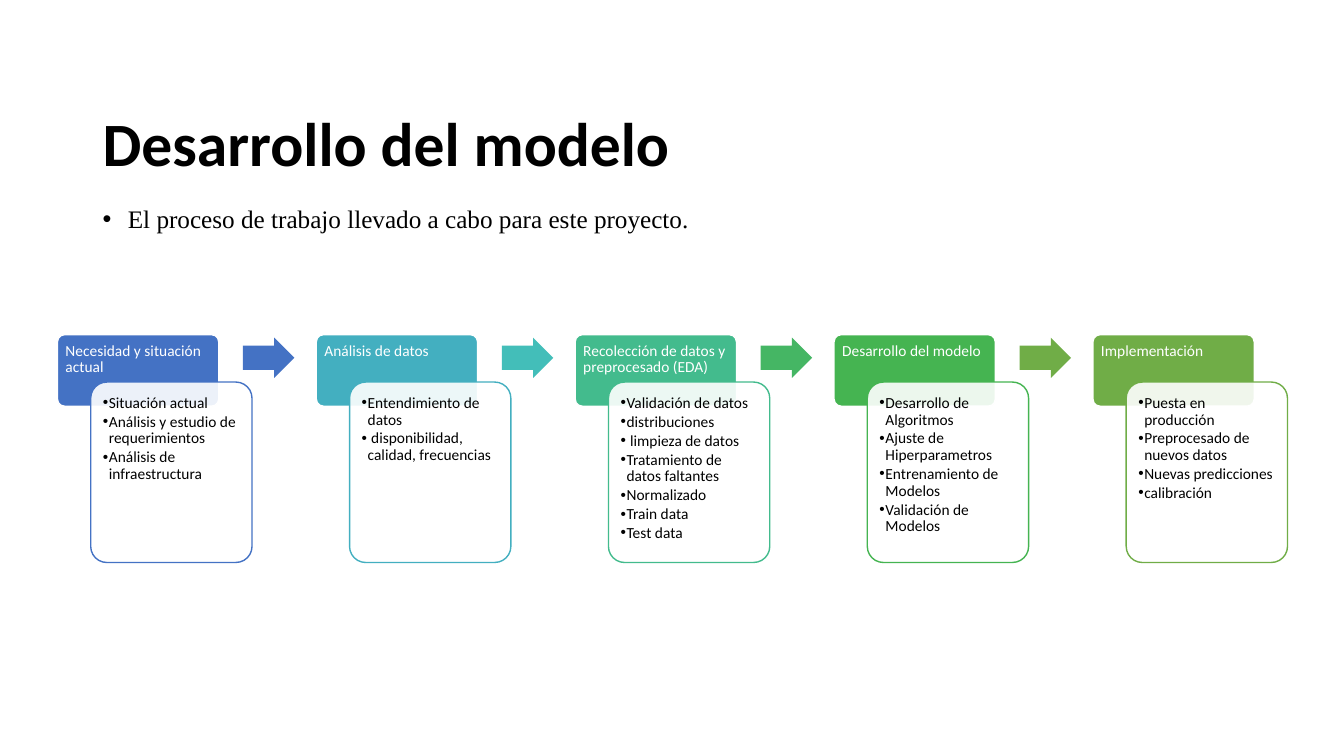
from pptx import Presentation
from pptx import util as u
from pptx.dml.color import RGBColor
from pptx.enum import shapes, text
from pptx.oxml.ns import qn
from lxml import etree

COLORS = {
    "white": "FFFFFF", "black": "000000", "blue": "4472C4",
    "cyan": "43AFC0", "turquoise": "43BEB9", "teal": "43BB8D",
    "emerald": "45B664", "green": "45B451", "olive": "70AD47",
}

# Heading, details, stage colour, colour of the arrow to the next stage
STAGES = [
    ("Necesidad y situación actual",
     ["Situación actual", "Análisis y estudio de requerimientos",
      "Análisis de infraestructura"], "blue", "blue"),
    ("Análisis de datos",
     ["Entendimiento de datos", " disponibilidad, calidad, frecuencias"],
     "cyan", "turquoise"),
    ("Recolección de datos y preprocesado (EDA)",
     ["Validación de datos", "distribuciones", " limpieza de datos",
      "Tratamiento de datos faltantes", "Normalizado", "Train data",
      "Test data"], "teal", "emerald"),
    ("Desarrollo del modelo",
     ["Desarrollo de Algoritmos", "Ajuste de Hiperparametros",
      "Entrenamiento de Modelos", "Validación de Modelos"],
     "green", "olive"),
    ("Implementación",
     ["Puesta en producción", "Preprocesado de nuevos datos",
      "Nuevas predicciones", "calibración"], "olive", None),
]
FIRST_LEFT, LAST_LEFT = 0.57, 10.84
PITCH = (LAST_LEFT - FIRST_LEFT) / (len(STAGES) - 1)


def rgb(name):
    return RGBColor.from_string(COLORS[name])


def write(frame, lines, size=11, font="Calibri", color="black", bold=False,
          hanging=0, after=0, level=0, insets=(0.1, 0.05, 0.1, 0.05),
          anchor=text.MSO_ANCHOR.TOP):
    """Fill a text frame, one paragraph a line; a hanging indent adds bullets."""
    frame.word_wrap = True
    frame.vertical_anchor = anchor
    (frame.margin_left, frame.margin_top,
     frame.margin_right, frame.margin_bottom) = map(u.Inches, insets)
    for index, line in enumerate(lines):
        para = frame.add_paragraph() if index else frame.paragraphs[0]
        if hanging:
            properties = para._p.get_or_add_pPr()
            properties.set("marL", str(u.Inches(hanging)))
            properties.set("indent", str(-u.Inches(hanging)))
            etree.SubElement(properties, qn("a:buFont"), typeface="Arial")
            etree.SubElement(properties, qn("a:buChar"), char="•")
        para.level = level
        para.alignment = text.PP_ALIGN.LEFT
        para.line_spacing = 0.9
        para.space_after = u.Pt(after)
        span = para.add_run()
        span.text = line
        span.font.size = u.Pt(size)
        span.font.name = font
        span.font.bold = bold
        span.font.color.rgb = rgb(color)


class ProcessSlide:
    def __init__(self, deck):
        self.page = deck.slides.add_slide(deck.slide_layouts[6])

    def text_box(self, area, lines, **style):
        box = self.page.shapes.add_textbox(*map(u.Inches, area))
        write(box.text_frame, lines, **style)

    def shape(self, kind, area, adjustments, fill, outline=None, opacity=100):
        item = self.page.shapes.add_shape(kind, *map(u.Inches, area))
        item.shadow.inherit = False
        for index, value in enumerate(adjustments):
            item.adjustments[index] = value
        item.fill.solid()
        item.fill.fore_color.rgb = rgb(fill)
        if opacity < 100:
            tint = item._element.spPr.find(qn("a:solidFill"))[0]
            etree.SubElement(tint, qn("a:alpha"), val=str(opacity * 1000))
        if outline:
            item.line.color.rgb = rgb(outline)
            item.line.width = u.Pt(1)
        else:
            item.line.fill.background()

    def stage(self, left, heading, details, color, arrow_color):
        rounded = shapes.MSO_SHAPE.ROUNDED_RECTANGLE
        self.shape(rounded, (left, 3.32, 1.6, 0.71), [0.1], color, "white")
        self.text_box((left, 3.32, 1.6, 0.47), [heading], color="white",
                      insets=(0.08, 0.08, 0.08, 0.05))
        self.shape(rounded, (left + 0.33, 3.79, 1.6, 1.79), [0.1],
                   "white", color, opacity=90)
        self.text_box((left + 0.37, 3.84, 1.5, 1.7), details, hanging=0.06,
                      after=1.65, level=1, insets=(0.08, 0.08, 0.08, 0.08))
        if arrow_color:
            self.shape(shapes.MSO_SHAPE.RIGHT_ARROW,
                       (left + 1.84, 3.35, 0.51, 0.4), [0.6, 0.5], arrow_color)


def main():
    deck = Presentation()
    deck.slide_width, deck.slide_height = u.Inches(13.33), u.Inches(7.5)
    slide = ProcessSlide(deck)
    slide.text_box((0.92, 1.07, 11.5, 0.77), ["Desarrollo del modelo"],
                   size=44, bold=True, anchor=text.MSO_ANCHOR.MIDDLE)
    slide.text_box((0.92, 2, 11.5, 4.76),
                   ["El proceso de trabajo llevado a cabo para este proyecto."],
                   size=18, font="Times New Roman", hanging=0.25)
    for index, stage in enumerate(STAGES):
        slide.stage(FIRST_LEFT + index * PITCH, *stage)
    deck.save("out.pptx")


if __name__ == "__main__":
    main()
